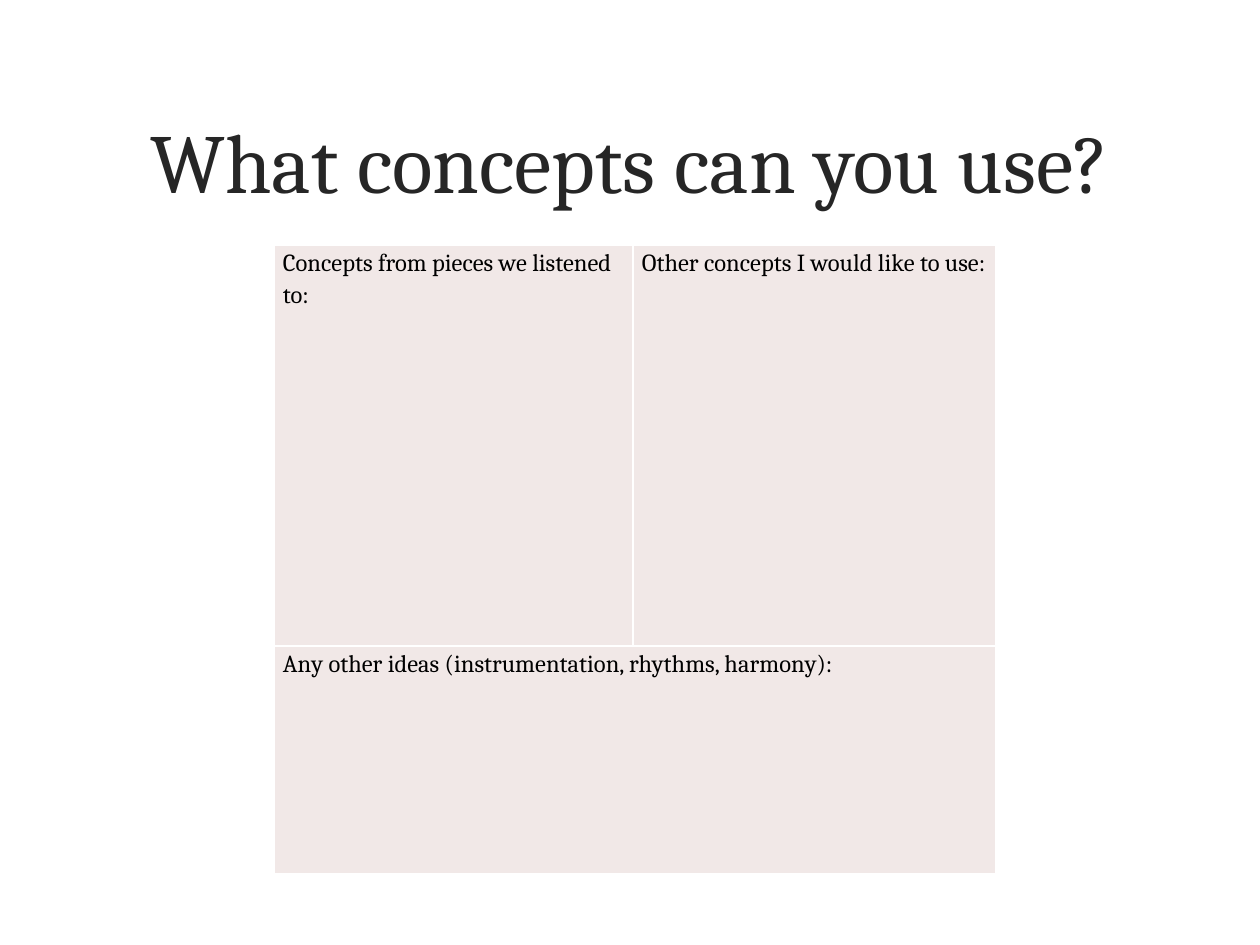
from lxml import etree
from pptx import Presentation
from pptx.dml.color import RGBColor
from pptx.enum.text import MSO_ANCHOR, MSO_AUTO_SIZE, PP_ALIGN
from pptx.oxml.ns import qn
from pptx.util import Emu, Pt

MIDDLE = MSO_ANCHOR.MIDDLE
NO_FIT = MSO_AUTO_SIZE.NONE
CENTER = PP_ALIGN.CENTER
TITLE_ONLY = 5
SCALE = 914400 / 126
FONT = "Cambria"
COLORS = {"title": "262626", "text": "000000", "cell": "F1E8E7", "border": "FFFFFF"}


def px(n):
    return Emu(round(n * SCALE))


def set_values(obj, values):
    for name, value in values.items():
        setattr(obj, name, value)


class SlideBuilder:
    def __init__(self, prs):
        self.s = prs.slides.add_slide(prs.slide_layouts[TITLE_ONLY])

    def place(self, sp, box):
        set_values(sp, dict(zip(("left", "top", "width", "height"), map(px, box))))

    def add_text(self, tf, text, size, color, paragraph):
        p = tf.paragraphs[0]
        set_values(p, paragraph)
        r = p.add_run()
        r.text = text
        set_values(r.font, {"name": FONT, "size": Pt(size)})
        r.font.color.rgb = RGBColor.from_string(COLORS[color])

    def title(self, text, box):
        sp = self.s.shapes.title
        self.place(sp, box)
        tf = sp.text_frame
        set_values(tf, {"word_wrap": True, "auto_size": NO_FIT, "vertical_anchor": MIDDLE})
        self.add_text(tf, text, 48, "title", {"alignment": CENTER})

    def border(self, cell):
        tcPr = cell._tc.get_or_add_tcPr()
        for i, side in enumerate(("lnL", "lnR", "lnT", "lnB")):
            ln = etree.Element(qn(f"a:{side}"), w=str(Pt(1)))
            fill = etree.SubElement(ln, qn("a:solidFill"))
            etree.SubElement(fill, qn("a:srgbClr"), val=COLORS["border"])
            tcPr.insert(i, ln)

    def table(self, left, top, widths, heights, texts):
        box = map(px, (left, top, sum(widths), sum(heights)))
        table = self.s.shapes.add_table(len(heights), len(widths), *box).table
        set_values(table, {"first_row": False, "horz_banding": False})
        for column, width in zip(table.columns, widths):
            column.width = px(width)
        for row, height in zip(table.rows, heights):
            row.height = px(height)
        for cell in table.iter_cells():
            set_values(cell, {"margin_left": px(9), "margin_right": px(9),
                              "margin_top": 0, "margin_bottom": 0})
            cell.fill.solid()
            cell.fill.fore_color.rgb = RGBColor.from_string(COLORS["cell"])
            self.border(cell)
        for (row, col), text in texts.items():
            self.add_text(table.cell(row, col).text_frame, text, 14, "text",
                          {"line_spacing": 1.15, "space_after": Pt(10)})
        return table


def main():
    prs = Presentation()
    set_values(prs, {"slide_width": px(1260), "slide_height": px(945)})
    slide = SlideBuilder(prs)
    slide.title("What concepts can you use?", (76, 60, 1108, 199))
    table = slide.table(274, 245, (359, 363), (401, 228), {
        (0, 0): "Concepts from pieces we listened to:",
        (0, 1): "Other concepts I would like to use:",
        (1, 0): "Any other ideas (instrumentation, rhythms, harmony):",
    })
    table.cell(1, 0).merge(table.cell(1, 1))
    prs.save("out.pptx")


if __name__ == "__main__":
    main()
